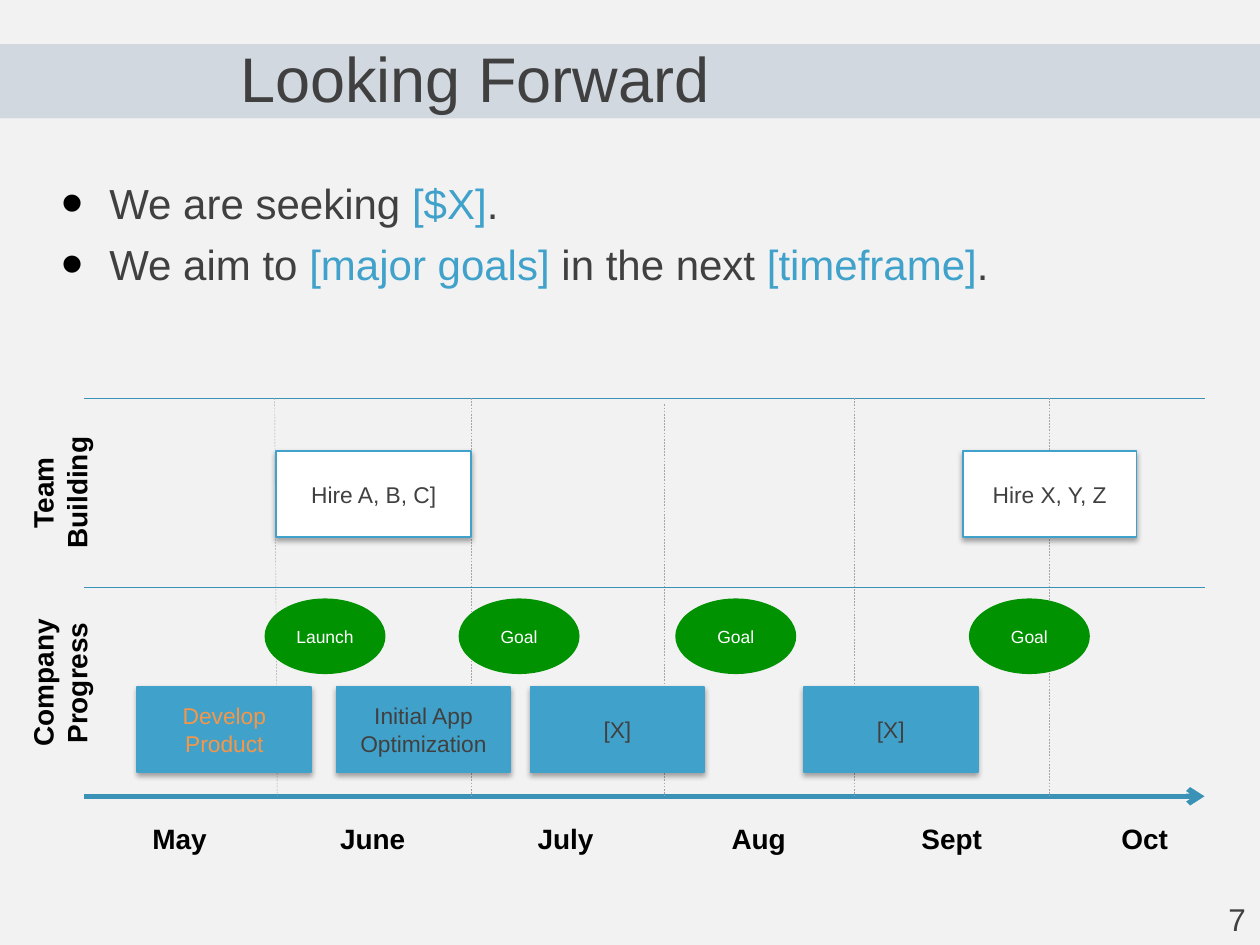
from dataclasses import dataclass

import lxml.etree
import pptx
import pptx.dml.color
import pptx.enum.dml
import pptx.enum.shapes
import pptx.enum.text
import pptx.oxml
import pptx.oxml.ns
import pptx.util

Inches = pptx.util.Inches
Pt = pptx.util.Pt
Shapes = pptx.enum.shapes.MSO_SHAPE
Align = pptx.enum.text.PP_ALIGN
Anchor = pptx.enum.text.MSO_ANCHOR
qn = pptx.oxml.ns.qn

COLORS = {
    "background": "F2F2F2",
    "band": "1F497D",
    "text": "404040",
    "accent": "40A2CB",
    "axis": "3A93B7",
    "divider": "A6A6A6",
    "goal": "009200",
    "highlight": "F79646",
    "white": "FFFFFF",
    "black": "000000",
}
NAMESPACE = 'xmlns:a="http://schemas.openxmlformats.org/drawingml/2006/main"'
SHADOW = (
    f'<a:effectLst {NAMESPACE}><a:outerShdw blurRad="{Pt(3.1)}" dist="{Pt(1.8)}" '
    'dir="5400000" rotWithShape="0"><a:srgbClr val="000000"><a:alpha val="35000"/>'
    "</a:srgbClr></a:outerShdw></a:effectLst>"
)


@dataclass
class Task:
    text: str
    left: float
    top: float = 5.45
    width: float = 1.38
    fill: str = "accent"
    color: str = "text"


@dataclass
class Goal:
    text: str
    left: float


@dataclass
class Divider:
    top_x: float
    bottom_x: float
    top: float = 3.16


AXIS_LEFT, AXIS_RIGHT, AXIS_Y = 0.67, 9.56, 6.32
MONTHS = ["May", "June", "July", "Aug", "Sept", "Oct"]
MONTH_STEP = 7.66 / 5
LANES = {"Team Building": 3.59, "Company Progress": 5.1}
DIVIDERS = [
    Divider(2.18, 2.2), Divider(3.74, 3.74), Divider(5.27, 5.27, 3.21),
    Divider(6.78, 6.78), Divider(8.33, 8.33),
]
TASKS = [
    Task("Hire A, B, C]", 2.19, 3.58, 1.55, "white"),
    Task("Hire X, Y, Z", 7.64, 3.58, fill="white"),
    Task("Develop Product", 1.09, color="highlight"),
    Task("Initial App Optimization", 2.67),
    Task("[X]", 4.21),
    Task("[X]", 6.38),
]
GOALS = [Goal("Launch", 2.1), Goal("Goal", 3.64), Goal("Goal", 5.36), Goal("Goal", 7.69)]
# Each bullet is a list of (text, colour) spans
BULLETS = [
    [("We are seeking ", "text"), ("[$X]", "accent"), (".", "text")],
    [("We aim to", "text"), (" [major goals]", "accent"), (" in the next", "text"),
     (" [timeframe]", "accent"), (".", "text")],
]


def rgb(name: str) -> pptx.dml.color.RGBColor:
    return pptx.dml.color.RGBColor.from_string(COLORS[name])


def style_font(font, size: float, color: str, bold: bool = False) -> None:
    font.name, font.size, font.bold = "Arial", Pt(size), bold
    font.color.rgb = rgb(color)


def write(shape, text: str, size: float, color: str, bold: bool = False,
          align=Align.CENTER) -> None:
    shape.text_frame.text = text
    para = shape.text_frame.paragraphs[0]
    para.alignment = align
    style_font(para.runs[0].font, size, color, bold)


def add_box(page, left: float, top: float, width: float, height: float, wrap: bool = True):
    box = page.shapes.add_textbox(Inches(left), Inches(top), Inches(width), Inches(height))
    box.text_frame.word_wrap = wrap
    return box


def add_shape(page, kind, left: float, top: float, width: float, height: float, fill: str):
    shape = page.shapes.add_shape(kind, Inches(left), Inches(top), Inches(width), Inches(height))
    shape.shadow.inherit = False
    shape.fill.solid()
    shape.fill.fore_color.rgb = rgb(fill)
    shape.line.fill.background()
    shape.text_frame.vertical_anchor = Anchor.MIDDLE
    return shape


def add_line(page, start: tuple[float, float], end: tuple[float, float], color: str,
             width: float = 0.25):
    line = page.shapes.add_connector(
        pptx.enum.shapes.MSO_CONNECTOR.STRAIGHT, *map(Inches, start + end))
    line.line.color.rgb = rgb(color)
    line.line.width = Pt(width)
    lxml.etree.SubElement(line._element.spPr, qn("a:effectLst"))
    return line


def add_task(page, task: Task) -> None:
    shape = add_shape(page, Shapes.RECTANGLE, task.left, task.top, task.width, 0.68, task.fill)
    shape.line.color.rgb = rgb("accent")
    shape.line.width = Pt(1)
    properties = shape._element.spPr
    properties.replace(properties.find(qn("a:effectLst")), pptx.oxml.parse_xml(SHADOW))
    write(shape, task.text, 13, task.color)


def add_bullet(para, spans: list[tuple[str, str]]) -> None:
    properties = para._p.get_or_add_pPr()
    properties.set("marL", str(Inches(0.38)))
    properties.set("indent", str(-Inches(0.38)))
    for xml in (
        f'<a:buClr {NAMESPACE}><a:srgbClr val="{COLORS["black"]}"/></a:buClr>',
        f'<a:buSzPct {NAMESPACE} val="150000"/>',
        f'<a:buFont {NAMESPACE} typeface="Arial"/>',
        f'<a:buChar {NAMESPACE} char="•"/>',
    ):
        properties.append(pptx.oxml.parse_xml(xml))
    for text, color in spans:
        span = para.add_run()
        span.text = text
        style_font(span.font, 24, color)


def main() -> None:
    deck = pptx.Presentation()
    deck.slide_width, deck.slide_height = Inches(10), Inches(7.5)
    page = deck.slides.add_slide(deck.slide_layouts[6])
    page.background.fill.solid()
    page.background.fill.fore_color.rgb = rgb("background")

    # Title on a translucent band
    band = add_shape(page, Shapes.RECTANGLE, 0, 0.35, 10, 0.59, "band")
    band_color = band._element.spPr.find(qn("a:solidFill"))[0]
    lxml.etree.SubElement(band_color, qn("a:alpha")).set("val", "15000")
    title = add_box(page, 1.81, 0.35, 6.7, 0.59)
    title.text_frame.vertical_anchor = Anchor.MIDDLE
    title.text_frame.margin_top = Inches(0.1)
    write(title, "Looking Forward", 36, "text", align=Align.LEFT)
    title.text_frame.paragraphs[0].line_spacing = 0.8

    # Bullets
    body = add_box(page, 0.39, 1.32, 9.13, 2.25).text_frame
    body.margin_top = Inches(0.09)
    for index, spans in enumerate(BULLETS):
        para = body.add_paragraph() if index else body.paragraphs[0]
        if index:
            para.space_before = Pt(6)
        add_bullet(para, spans)

    # Time axis and lane borders
    axis = add_line(page, (AXIS_LEFT, AXIS_Y), (AXIS_RIGHT, AXIS_Y), "axis", 3)
    arrow = lxml.etree.SubElement(axis.line._get_or_add_ln(), qn("a:tailEnd"))
    arrow.set("type", "arrow")
    for y in (3.16, 4.66):
        add_line(page, (AXIS_LEFT, y), (AXIS_RIGHT, y), "axis")

    # Lane and month labels
    for name, top in LANES.items():
        label = add_box(page, -0.28, top, 1.51, 0.64)
        label.rotation = 270
        write(label, name, 16, "black", True)
    for index, month in enumerate(MONTHS):
        label = add_box(page, AXIS_LEFT + index * MONTH_STEP, 6.47, 1.51, 0.37)
        write(label, month, 16, "black", True)

    # Month dividers
    for divider in DIVIDERS:
        line = add_line(page, (divider.top_x, divider.top), (divider.bottom_x, AXIS_Y), "divider")
        line.line.dash_style = pptx.enum.dml.MSO_LINE.DASH

    # Tasks and goals
    for task in TASKS:
        add_task(page, task)
    for goal in GOALS:
        oval = add_shape(page, Shapes.OVAL, goal.left, 4.75, 0.96, 0.6, "goal")
        write(oval, goal.text, 10, "white")

    # Page number
    number = add_box(page, 9.65, 7.09, 0.34, 0.4, wrap=False)
    write(number, "7", 18, "text", align=Align.LEFT)

    deck.save("out.pptx")


if __name__ == "__main__":
    main()
